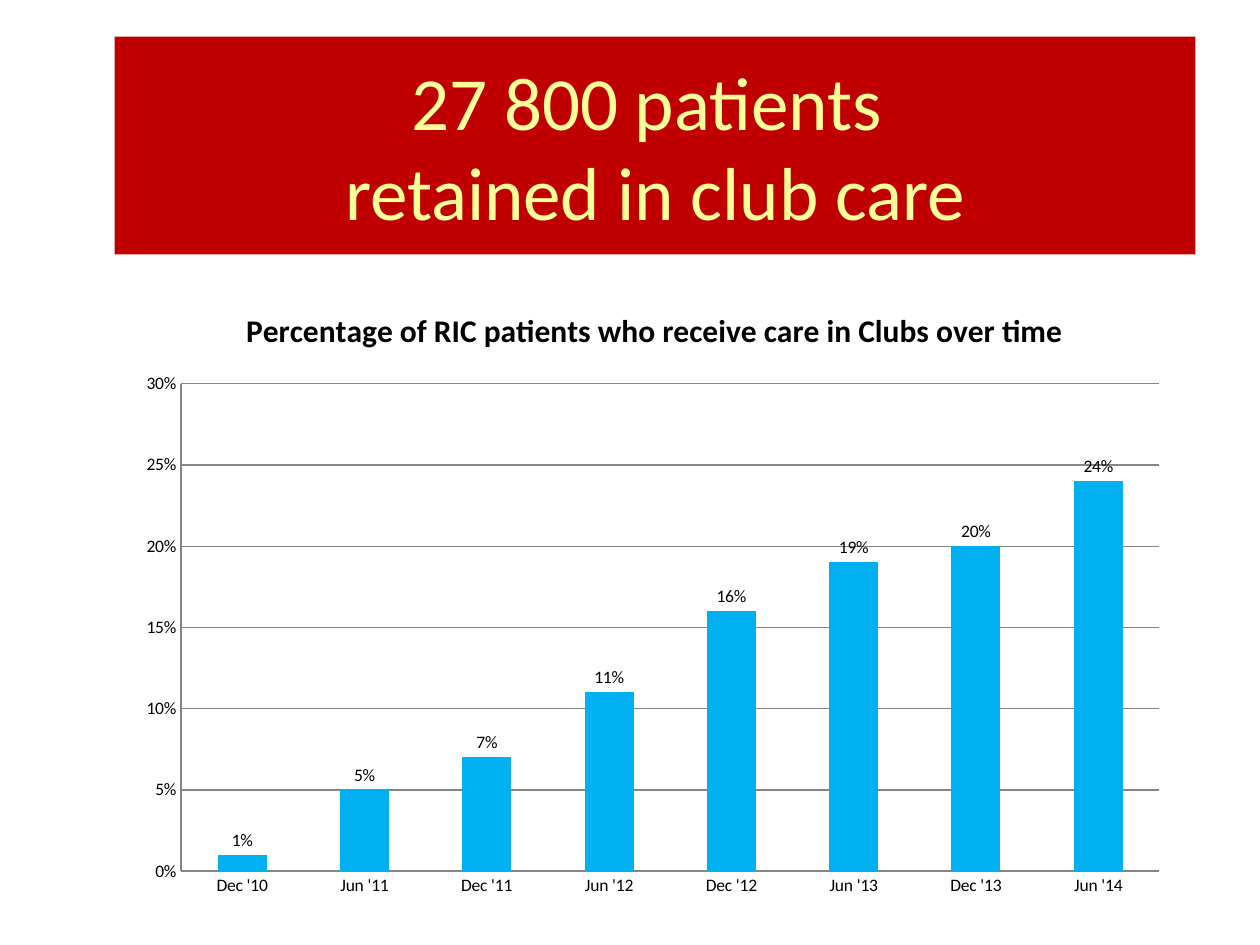
import lxml.etree
import pptx
import pptx.chart.data
import pptx.dml.color
import pptx.enum.chart
import pptx.enum.text
import pptx.oxml.ns
import pptx.util
from dataclasses import dataclass
from pptx.util import Cm


@dataclass(frozen=True)
class Theme:
    font: str = "Calibri"
    banner: str = "C00000"
    banner_text: str = "FFFF99"
    bar: str = "00B0F0"
    text: str = "000000"
    grid: str = "868686"
    banner_size: float = 42.9
    chart_title_size: float = 18
    label_size: float = 10


THEME = Theme()
TITLE_LINES = ["27 800 patients ", "retained in club care"]
CHART_TITLE = "Percentage of RIC patients who receive care in Clubs over time"
CLUB_SHARE = {
    "Dec '10": 0.01,
    "Jun '11": 0.05,
    "Dec '11": 0.07,
    "Jun '12": 0.11,
    "Dec '12": 0.16,
    "Jun '13": 0.19,
    "Dec '13": 0.20,
    "Jun '14": 0.24,
}
BANNER_BOX = (Cm(2.31), Cm(0.74), Cm(21.79), Cm(4.39))
CHART_BOX = (Cm(2.59), Cm(5.72), Cm(21.21), Cm(12.6))
PLOT_AREA = {"x": 0.05, "y": 0.16, "w": 0.93, "h": 0.78}


def color(value):
    return pptx.dml.color.RGBColor.from_string(value)


def style_font(font, size, value, bold=False):
    font.name = THEME.font
    font.size = pptx.util.Pt(size)
    font.bold = bold
    font.color.rgb = color(value)


def style_line(line):
    line.color.rgb = color(THEME.grid)
    line.width = pptx.util.Pt(0.75)


def add_banner(slide):
    title = slide.shapes.title
    title.left, title.top, title.width, title.height = BANNER_BOX
    title.fill.solid()
    title.fill.fore_color.rgb = color(THEME.banner)
    frame = title.text_frame
    frame.auto_size = pptx.enum.text.MSO_AUTO_SIZE.NONE
    frame.vertical_anchor = pptx.enum.text.MSO_ANCHOR.MIDDLE
    for index, line in enumerate(TITLE_LINES):
        paragraph = frame.add_paragraph() if index else frame.paragraphs[0]
        paragraph.alignment = pptx.enum.text.PP_ALIGN.CENTER
        run = paragraph.add_run()
        run.text = line
        style_font(run.font, THEME.banner_size, THEME.banner_text)


def place_plot_area(chart):
    qn = pptx.oxml.ns.qn
    plot_area = chart.plots[0]._element.getparent()
    for old_layout in plot_area.findall(qn("c:layout")):
        plot_area.remove(old_layout)
    layout = lxml.etree.Element(qn("c:layout"))
    manual = lxml.etree.SubElement(layout, qn("c:manualLayout"))
    settings = {"layoutTarget": "inner", "xMode": "edge", "yMode": "edge", **PLOT_AREA}
    for name, value in settings.items():
        lxml.etree.SubElement(manual, qn("c:" + name), val=str(value))
    plot_area.insert(0, layout)


def add_club_chart(slide):
    data = pptx.chart.data.CategoryChartData(number_format="0%")
    data.categories = list(CLUB_SHARE)
    data.add_series("Series 1", list(CLUB_SHARE.values()))
    chart_type = pptx.enum.chart.XL_CHART_TYPE.COLUMN_CLUSTERED
    chart = slide.shapes.add_chart(chart_type, *CHART_BOX, data).chart
    style_font(chart.font, THEME.label_size, THEME.text)
    chart.has_legend = False

    chart.has_title = True
    run = chart.chart_title.text_frame.paragraphs[0].add_run()
    run.text = CHART_TITLE
    style_font(run.font, THEME.chart_title_size, THEME.text, bold=True)
    chart.chart_title.include_in_layout = False

    for axis in (chart.category_axis, chart.value_axis):
        axis.major_tick_mark = pptx.enum.chart.XL_TICK_MARK.NONE
        axis.minor_tick_mark = pptx.enum.chart.XL_TICK_MARK.NONE
        style_line(axis.format.line)
    value_axis = chart.value_axis
    value_axis.minimum_scale, value_axis.maximum_scale = 0, 0.3
    value_axis.major_unit = 0.05
    value_axis.has_major_gridlines = True
    style_line(value_axis.major_gridlines.format.line)
    value_axis.tick_labels.number_format = "0%"
    value_axis.tick_labels.number_format_is_linked = False

    plot = chart.plots[0]
    plot.gap_width = 150
    plot.vary_by_categories = False
    series = plot.series[0]
    series.format.fill.solid()
    series.format.fill.fore_color.rgb = color(THEME.bar)
    labels = series.data_labels
    labels.show_value = True
    labels.number_format = "0%"
    labels.number_format_is_linked = False
    labels.position = pptx.enum.chart.XL_LABEL_POSITION.OUTSIDE_END
    style_font(labels.font, THEME.label_size, THEME.text)
    place_plot_area(chart)


def main():
    presentation = pptx.Presentation()
    presentation.slide_width, presentation.slide_height = Cm(25.4), Cm(19.05)
    slide = presentation.slides.add_slide(presentation.slide_layouts[5])
    add_banner(slide)
    add_club_chart(slide)
    presentation.save("out.pptx")


if __name__ == "__main__":
    main()
